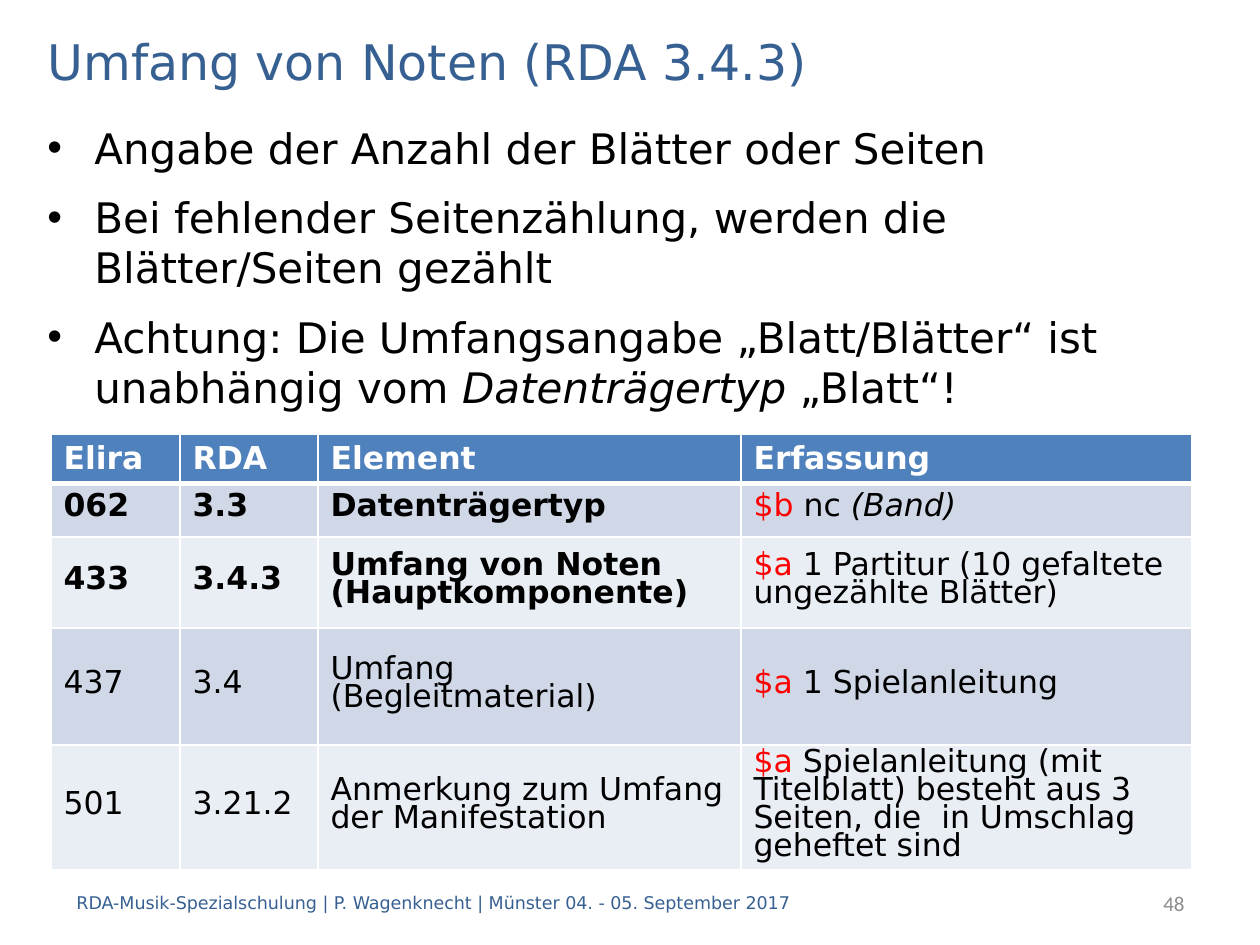
from dataclasses import dataclass
from typing import NamedTuple

from lxml import etree
from pptx import Presentation
from pptx.dml.color import RGBColor
from pptx.enum.text import MSO_ANCHOR, MSO_AUTO_SIZE, PP_ALIGN
from pptx.oxml.ns import qn
from pptx.util import Emu, Pt

LEFT, RIGHT = PP_ALIGN.LEFT, PP_ALIGN.RIGHT
TOP, MIDDLE = MSO_ANCHOR.TOP, MSO_ANCHOR.MIDDLE
NO_AUTOFIT = MSO_AUTO_SIZE.NONE

PX_PER_INCH = 126
FONT = "DejaVu Sans"
NUMBER_FONT = "Calibri"
BLACK = RGBColor(0x00, 0x00, 0x00)
WHITE = RGBColor(0xFF, 0xFF, 0xFF)
RED = RGBColor(0xFF, 0x00, 0x00)
NAVY = RGBColor(0x37, 0x60, 0x92)
GREY = RGBColor(0x8C, 0x8C, 0x8C)
HEADER_BLUE = RGBColor(0x4F, 0x81, 0xBD)
BANDS = (RGBColor(0xD0, 0xD8, 0xE8), RGBColor(0xE9, 0xED, 0xF4))


class Box(NamedTuple):
    left: int
    top: int
    width: int
    height: int


class Span(NamedTuple):
    text: str
    color: RGBColor = BLACK
    italic: bool = False


@dataclass
class Entry:
    field: str
    rule: str
    element: str
    subfield: str
    value: list[Span]
    bold: bool = False


TITLE_BOX = Box(35, 25, 1191, 71)
BODY_BOX = Box(35, 116, 1191, 753)
FOOTER_BOX = Box(64, 878, 1052, 50)
NUMBER_BOX = Box(997, 878, 200, 50)
TABLE_BOX = Box(51, 434, 1141, 426)
COLUMN_WIDTHS = (129, 138, 423, 451)
ROW_HEIGHTS = (47, 54, 91, 117, 117)
BULLET_INDENT = 47

BULLETS = [
    [Span("Angabe der Anzahl der Blätter oder Seiten")],
    [Span("Bei fehlender Seitenzählung, werden die Blätter/Seiten gezählt")],
    [
        Span("Achtung: Die Umfangsangabe „Blatt/Blätter“ ist unabhängig vom "),
        Span("Datenträgertyp", italic=True),
        Span(" „Blatt“!"),
    ],
]
HEADINGS = ("Elira", "RDA", "Element", "Erfassung")
ENTRIES = [
    Entry("062", "3.3", "Datenträgertyp", "$b ",
          [Span("nc "), Span("(Band)", italic=True)], bold=True),
    Entry("433", "3.4.3", "Umfang von Noten\n(Hauptkomponente)", "$a ",
          [Span("1 Partitur (10 gefaltete ungezählte Blätter)")], bold=True),
    Entry("437", "3.4", "Umfang\n(Begleitmaterial)", "$a ",
          [Span("1 Spielanleitung")]),
    Entry("501", "3.21.2", "Anmerkung zum Umfang der Manifestation", "$a ",
          [Span("Spielanleitung (mit Titelblatt) besteht aus 3 Seiten, "
                "die  in Umschlag geheftet sind")]),
]


def px(length: int) -> Emu:
    return Emu(round(length * 914400 / PX_PER_INCH))


def write(para, spans: list[Span], *, size: int, font: str = FONT,
          bold: bool = False, align=LEFT, before: float = 0, after: float = 0,
          line: float | None = None) -> None:
    """Fill a paragraph; a newline in a span becomes a line break."""
    para.alignment = align
    para.space_before, para.space_after = Pt(before), Pt(after)
    if line:
        para.line_spacing = Pt(line)
    for span in spans:
        for index, part in enumerate(span.text.split("\n")):
            if index:
                para.add_line_break()
            run = para.add_run()
            run.text = part
            run.font.name, run.font.size = font, Pt(size)
            run.font.bold, run.font.italic = bold, span.italic
            run.font.color.rgb = span.color


def prepare_frame(frame, anchor) -> None:
    frame.word_wrap = True
    frame.auto_size = NO_AUTOFIT
    frame.vertical_anchor = anchor


def add_text_box(page, box: Box, anchor=MIDDLE):
    frame = page.shapes.add_textbox(*map(px, box)).text_frame
    prepare_frame(frame, anchor)
    return frame


def set_title(page, text: str) -> None:
    title = page.shapes.title
    title.left, title.top, title.width, title.height = map(px, TITLE_BOX)
    prepare_frame(title.text_frame, MIDDLE)
    write(title.text_frame.paragraphs[0], [Span(text, NAVY)], size=28)


def add_bullets(page) -> None:
    frame = add_text_box(page, BODY_BOX, TOP)
    for index, spans in enumerate(BULLETS):
        para = frame.add_paragraph() if index else frame.paragraphs[0]
        write(para, spans, size=24, before=4.8, after=6)
        properties = para._p.get_or_add_pPr()
        properties.set("marL", str(px(BULLET_INDENT)))
        properties.set("indent", str(-px(BULLET_INDENT)))
        etree.SubElement(properties, qn("a:buFont"), typeface="Arial")
        etree.SubElement(properties, qn("a:buChar"), char="•")


def style_cell(cell, fill: RGBColor, top: int, bottom: int) -> None:
    """Set white borders, with top and bottom widths in points, and the fill."""
    properties = cell._tc.get_or_add_tcPr()
    for side, width in (("L", 1), ("R", 1), ("T", top), ("B", bottom)):
        border = etree.SubElement(properties, qn(f"a:ln{side}"), w=str(Pt(width)))
        solid = etree.SubElement(border, qn("a:solidFill"))
        etree.SubElement(solid, qn("a:srgbClr"), val=str(WHITE))
    cell.fill.solid()
    cell.fill.fore_color.rgb = fill


def add_field_table(page) -> None:
    table = page.shapes.add_table(
        len(ROW_HEIGHTS), len(COLUMN_WIDTHS), *map(px, TABLE_BOX)).table
    for column, width in zip(table.columns, COLUMN_WIDTHS):
        column.width = px(width)
    for row, height in zip(table.rows, ROW_HEIGHTS):
        row.height = px(height)

    for column, heading in enumerate(HEADINGS):
        cell = table.cell(0, column)
        style_cell(cell, HEADER_BLUE, top=1, bottom=3)
        write(cell.text_frame.paragraphs[0], [Span(heading, WHITE)],
              size=18, bold=True)

    for row, entry in enumerate(ENTRIES, start=1):
        labels = [[Span(text)] for text in (entry.field, entry.rule, entry.element)]
        recording = [Span(entry.subfield, RED), *entry.value]
        for column, spans in enumerate([*labels, recording]):
            cell = table.cell(row, column)
            cell.vertical_anchor = MIDDLE
            style_cell(cell, BANDS[(row - 1) % 2], top=3 if row == 1 else 1, bottom=1)
            write(cell.text_frame.paragraphs[0], spans, size=18, line=16,
                  before=6, after=6, bold=entry.bold and column < len(labels))


def main() -> None:
    deck = Presentation()
    deck.slide_width, deck.slide_height = px(1260), px(945)
    page = deck.slides.add_slide(deck.slide_layouts.get_by_name("Title Only"))
    set_title(page, "Umfang von Noten (RDA 3.4.3)")
    add_bullets(page)
    footer = "RDA-Musik-Spezialschulung | P. Wagenknecht | Münster 04. - 05. September 2017"
    write(add_text_box(page, FOOTER_BOX).paragraphs[0], [Span(footer, NAVY)], size=10)
    write(add_text_box(page, NUMBER_BOX).paragraphs[0], [Span("48", GREY)],
          size=12, font=NUMBER_FONT, align=RIGHT)
    add_field_table(page)
    deck.save("out.pptx")


if __name__ == "__main__":
    main()
